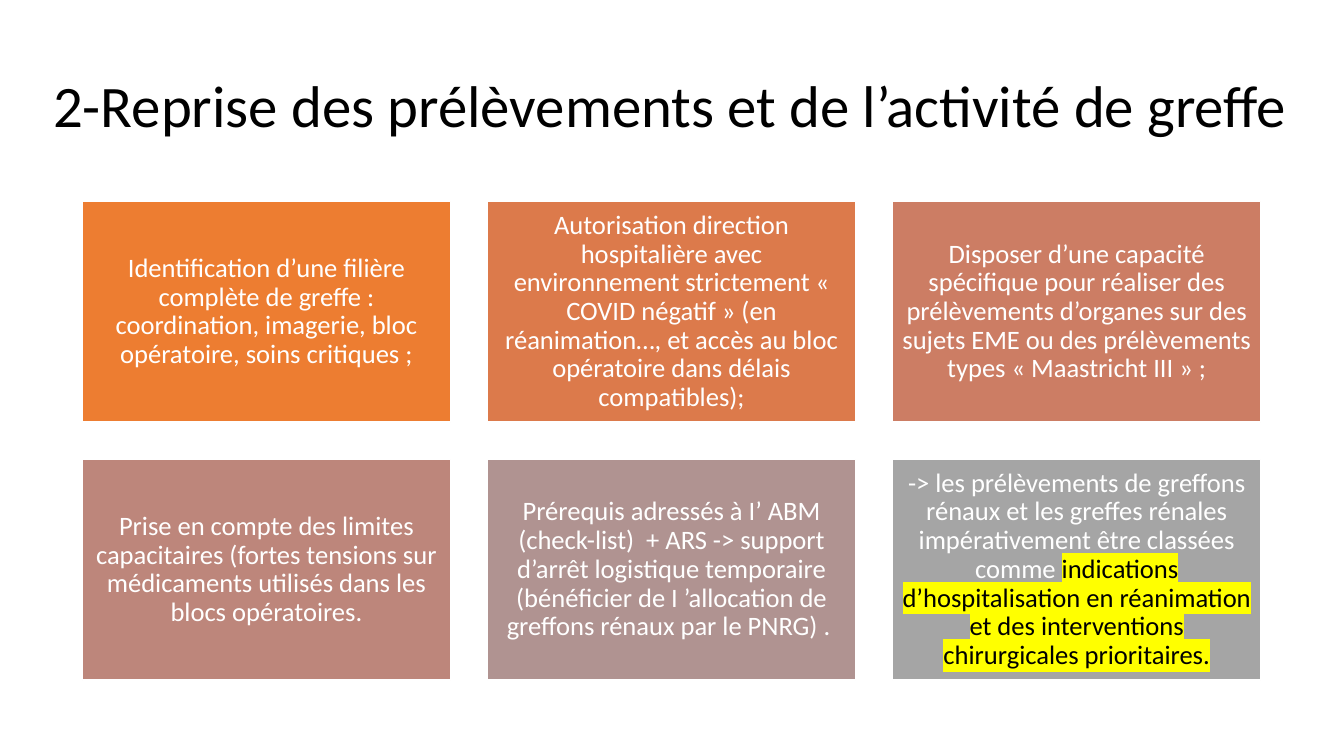
"""Build the slide on resuming organ retrieval and transplant activity."""
from lxml.etree import Element, SubElement
from pptx import Presentation
from pptx.dml.color import RGBColor
from pptx.enum.shapes import MSO_SHAPE as Shape
from pptx.enum.text import MSO_ANCHOR as Anchor, PP_ALIGN as Align
from pptx.oxml.ns import qn
from pptx.util import Cm, Pt


def color(value):
    """Turn a hex string into a colour."""
    return RGBColor.from_string(value)


def add_run(paragraph, text, size, ink, highlight=None):
    """Append a formatted run, highlighted if a colour is given."""
    run = paragraph.add_run()
    run.text = text
    font = run.font
    font.color.rgb = color(ink)
    for name, value in {"name": "Calibri", "size": Pt(size)}.items():
        setattr(font, name, value)
    if highlight:
        marker = Element(qn("a:highlight"))
        SubElement(marker, qn("a:srgbClr")).set("val", highlight)
        run._r.rPr.find(qn("a:solidFill")).addnext(marker)


presentation = Presentation()
presentation.slide_width, presentation.slide_height = Cm(33.87), Cm(19.05)
slide = presentation.slides.add_slide(presentation.slide_layouts[6])

title = slide.shapes.add_textbox(Cm(1.09), Cm(0.89), Cm(31.7), Cm(3.68))
title.text_frame.word_wrap = True
title.text_frame.vertical_anchor = Anchor.MIDDLE
heading = title.text_frame.paragraphs[0]
heading.line_spacing = 0.9
add_run(heading, "2-Reprise des prélèvements et de l’activité de greffe", 42, "000000")

cards = [
    ("ED7D31", "Identification d’une filière complète de greffe : coordination, "
               "imagerie, bloc opératoire, soins critiques ;", ""),
    ("DC7A4B", "Autorisation direction hospitalière avec environnement strictement "
               "« COVID négatif » (en réanimation…, et accès au bloc opératoire dans "
               "délais compatibles);", ""),
    ("CC7D64", "Disposer d’une capacité spécifique pour réaliser des prélèvements "
               "d’organes sur des sujets EME ou des prélèvements types "
               "« Maastricht III » ;", ""),
    ("BD867B", "Prise en compte des limites capacitaires (fortes tensions sur "
               "médicaments utilisés dans les blocs opératoires.", ""),
    ("B09391", "Prérequis adressés à I’ ABM (check-list)  + ARS -> support d’arrêt "
               "logistique temporaire (bénéficier de I ’allocation de greffons rénaux "
               "par le PNRG) . ", ""),
    ("A5A5A5", "-> les prélèvements de greffons rénaux et les greffes rénales "
               "impérativement être classées comme ",
     "indications d’hospitalisation en réanimation et des interventions "
     "chirurgicales prioritaires."),
]
columns = 3
left, top, width, height, gap = 2.08, 5.08, 9.27, 5.56, 0.94
frame_format = {"word_wrap": True, "vertical_anchor": Anchor.MIDDLE}
for side in ("left", "top", "right", "bottom"):
    frame_format[f"margin_{side}"] = Cm(0.2)

for index, (fill, text, priority) in enumerate(cards):
    row, column = divmod(index, columns)
    card = slide.shapes.add_shape(
        Shape.RECTANGLE, Cm(left + column * (width + gap)),
        Cm(top + row * (height + gap)), Cm(width), Cm(height))
    card.shadow.inherit = False
    card.fill.solid()
    card.fill.fore_color.rgb = color(fill)
    card.line.color.rgb = color("FFFFFF")
    card.line.width = Pt(1)
    for name, value in frame_format.items():
        setattr(card.text_frame, name, value)
    paragraph = card.text_frame.paragraphs[0]
    for name, value in {"alignment": Align.CENTER, "line_spacing": 0.9}.items():
        setattr(paragraph, name, value)
    add_run(paragraph, text, 19, "FFFFFF")
    if priority:
        add_run(paragraph, priority, 19, "000000", "FFFF00")

presentation.save("out.pptx")
